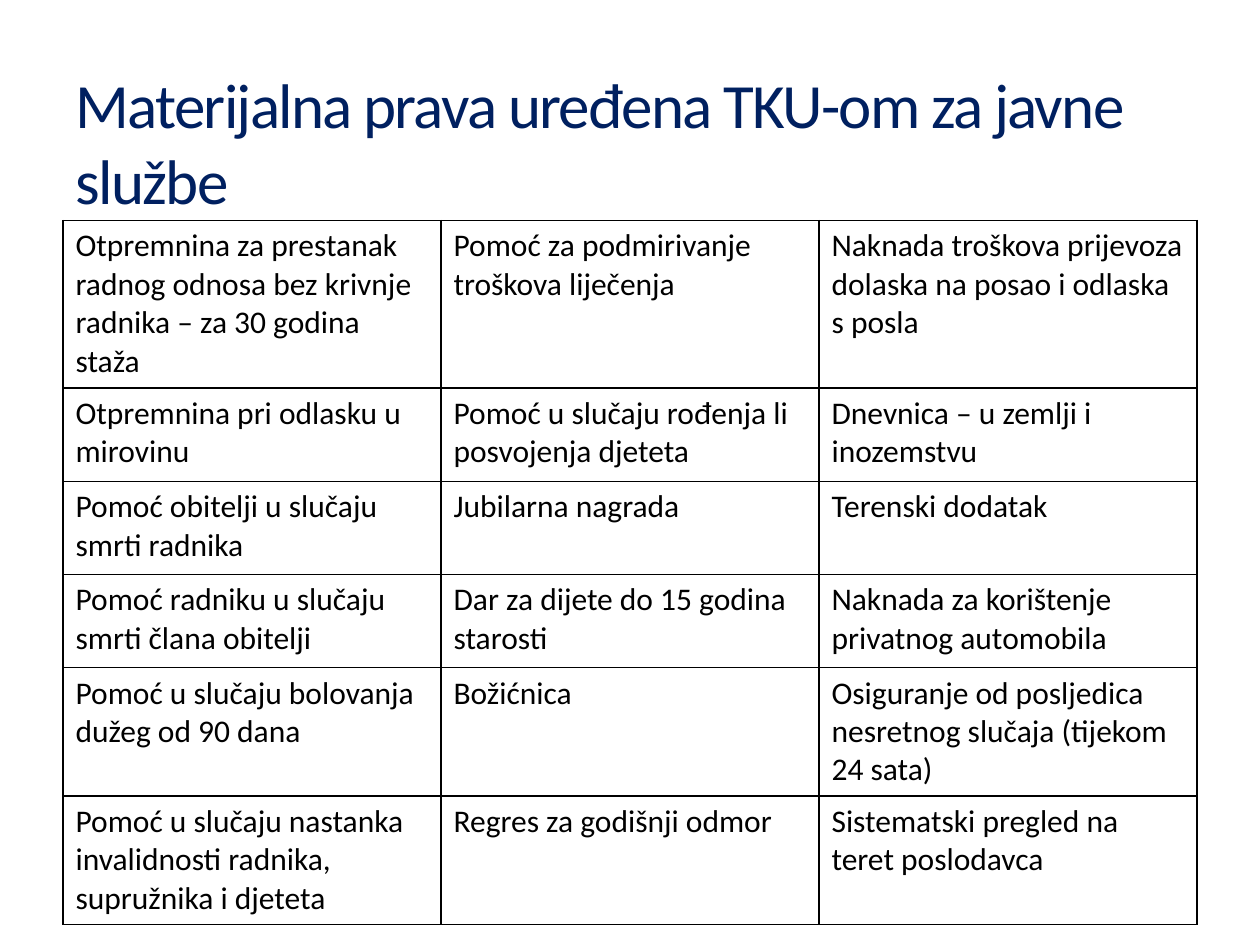
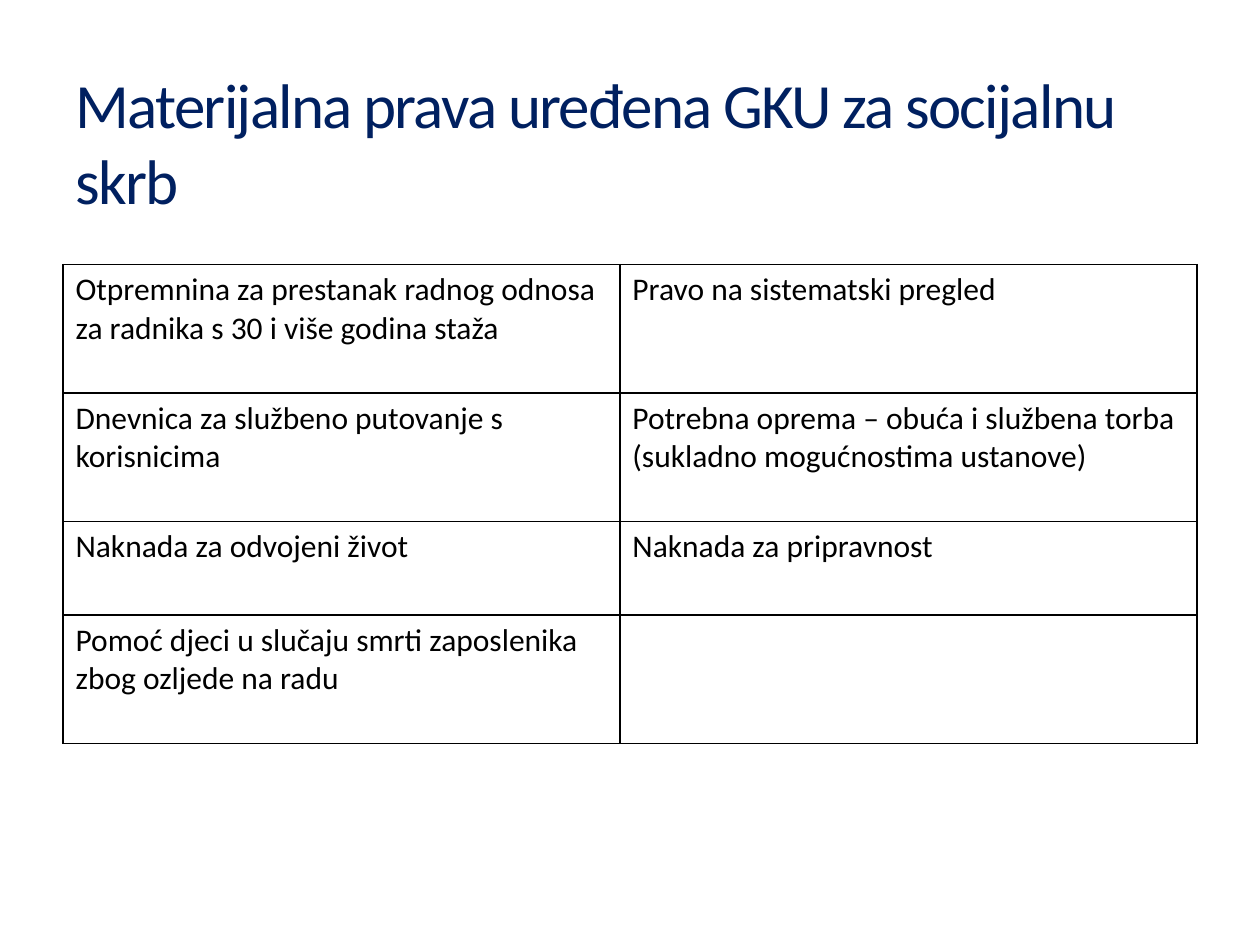
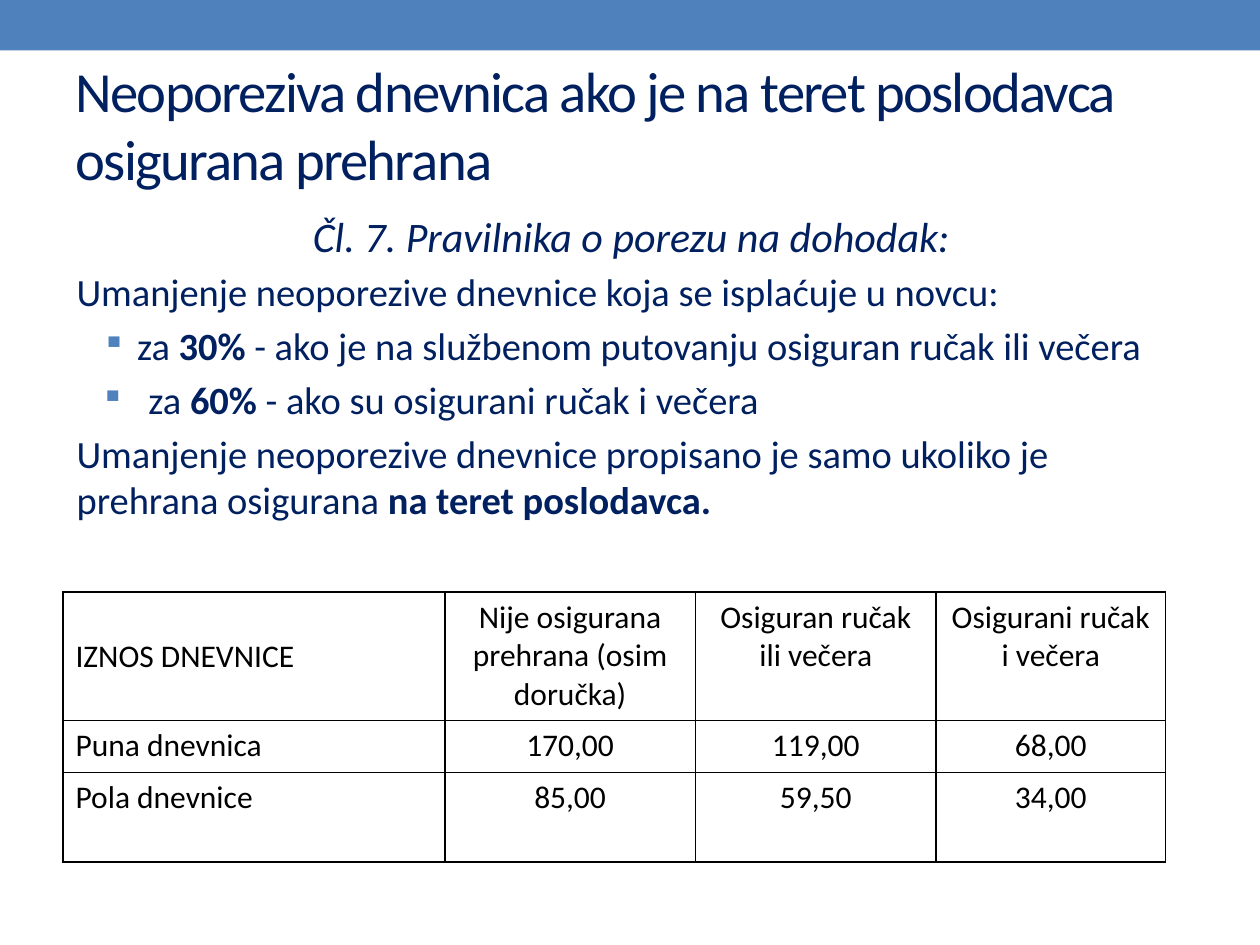
from lxml import etree
from pptx import Presentation
from pptx.dml.color import RGBColor
from pptx.enum import shapes, text
from pptx.oxml.ns import qn
from pptx.util import Inches, Pt

NAVY = RGBColor(0x00, 0x20, 0x60)
BLUE = RGBColor(0x4F, 0x81, 0xBD)
BLACK = RGBColor(0x00, 0x00, 0x00)
FONT = "Calibri"
LEFT = 0.5
WIDTH = 9

PUBLIC_SERVICE_RIGHTS = [
    ("Otpremnina za prestanak radnog odnosa bez krivnje radnika – za 30 godina staža",
     "Pomoć za podmirivanje troškova liječenja",
     "Naknada troškova prijevoza dolaska na posao i odlaska s posla"),
    ("Otpremnina pri odlasku u mirovinu",
     "Pomoć u slučaju rođenja li posvojenja djeteta",
     "Dnevnica – u zemlji i inozemstvu"),
    ("Pomoć obitelji u slučaju smrti radnika", "Jubilarna nagrada", "Terenski dodatak"),
    ("Pomoć radniku u slučaju smrti člana obitelji",
     "Dar za dijete do 15 godina starosti",
     "Naknada za korištenje privatnog automobila"),
    ("Pomoć u slučaju bolovanja dužeg od 90 dana",
     "Božićnica",
     "Osiguranje od posljedica nesretnog slučaja (tijekom 24 sata)"),
    ("Pomoć u slučaju nastanka invalidnosti radnika, supružnika i djeteta",
     "Regres za godišnji odmor",
     "Sistematski pregled na teret poslodavca"),
]
SOCIAL_CARE_RIGHTS = [
    ("Otpremnina za prestanak radnog odnosa za radnika s 30 i više godina staža",
     "Pravo na sistematski pregled"),
    ("Dnevnica za službeno putovanje s korisnicima",
     "Potrebna oprema – obuća i službena torba (sukladno mogućnostima ustanove)"),
    ("Naknada za odvojeni život", "Naknada za pripravnost"),
    ("Pomoć djeci u slučaju smrti zaposlenika zbog ozljede na radu", ""),
]
ALLOWANCES = [
    ("IZNOS DNEVNICE", "Nije osigurana prehrana (osim doručka)",
     "Osiguran ručak ili večera", "Osigurani ručak i večera"),
    ("Puna dnevnica", "170,00", "119,00", "68,00"),
    ("Pola dnevnice", "85,00", "59,50", "34,00"),
]
SLIDES = [
    dict(title="Materijalna prava uređena TKU-om za javne službe", title_height=1.08,
         title_size=36, rows=PUBLIC_SERVICE_RIGHTS, top=1.75, columns=[3, 3, 3],
         heights=[1.33, 0.74, 0.74, 0.74, 1.02, 1.02]),
    dict(title="Materijalna prava uređena GKU za socijalnu skrb", title_height=1.08,
         title_size=36, rows=SOCIAL_CARE_RIGHTS, top=2.1, columns=[4.42, 4.58],
         heights=[1.02, 1.02, 0.74, 1.02]),
    dict(title="Neoporeziva dnevnica ako je na teret poslodavca osigurana prehrana",
         title_height=0.8, title_size=32.4, rows=ALLOWANCES, top=4.7,
         columns=[3.03, 1.99, 1.91, 1.82], heights=[1.02, 0.41, 0.71]),
]
RULE_HEADING = "Čl. 7. Pravilnika o porezu na dohodak:"
RULES = [
    (None, [("Umanjenje neoporezive dnevnice koja se isplaćuje u novcu:", False)]),
    ((0.48, -0.28), [("za ", False), ("30% ", True),
                     ("- ako je na službenom putovanju osiguran ručak ili večera", False)]),
    ((0.57, -0.38), [("za ", False), ("60% ", True),
                     ("- ako su osigurani ručak i večera", False)]),
    (None, [("Umanjenje neoporezive dnevnice propisano je samo ukoliko je prehrana osigurana ",
             False), ("na teret poslodavca.", True)]),
]


def set_font(paragraph, size, color):
    paragraph.font.name = FONT
    paragraph.font.size = Pt(size)
    paragraph.font.color.rgb = color


def add_title(slide, title, height, size):
    shape = slide.shapes.title
    shape.left, shape.top = Inches(LEFT), Inches(0.58)
    shape.width, shape.height = Inches(WIDTH), Inches(height)
    frame = shape.text_frame
    frame.text = title
    frame.word_wrap = True
    frame.auto_size = text.MSO_AUTO_SIZE.NONE
    frame.vertical_anchor = text.MSO_ANCHOR.MIDDLE
    paragraph = frame.paragraphs[0]
    paragraph.alignment = text.PP_ALIGN.LEFT
    set_font(paragraph, size, NAVY)
    paragraph.runs[0].font._element.set("spc", "-100")


def add_borders(cell):
    properties = cell._tc.get_or_add_tcPr()
    for position, side in enumerate(("lnL", "lnR", "lnT", "lnB")):
        line = etree.Element(qn(f"a:{side}"), w=str(Pt(1)))
        fill = etree.SubElement(line, qn("a:solidFill"))
        etree.SubElement(fill, qn("a:srgbClr"), val=str(BLACK))
        properties.insert(position, line)


def add_grid(slide, rows, top, columns, heights):
    table = slide.shapes.add_table(
        len(rows), len(columns), Inches(LEFT), Inches(top),
        Inches(sum(columns)), Inches(sum(heights))).table
    table.first_row = table.horz_banding = False
    for column, width in zip(table.columns, columns):
        column.width = Inches(width)
    for row, height, values in zip(table.rows, heights, rows):
        row.height = Inches(height)
        for cell, value in zip(row.cells, values):
            cell.text = value
            cell.fill.background()
            set_font(cell.text_frame.paragraphs[0], 18, BLACK)
            add_borders(cell)
    return table


def add_band(slide):
    band = slide.shapes.add_shape(
        shapes.MSO_SHAPE.RECTANGLE, 0, 0, Inches(10), Inches(0.4))
    band.shadow.inherit = False
    band.fill.solid()
    band.fill.fore_color.rgb = BLUE
    band.line.fill.background()


def add_bullet(paragraph, margin, indent):
    properties = paragraph._p.get_or_add_pPr()
    properties.set("marL", str(Inches(margin)))
    properties.set("indent", str(Inches(indent)))
    color = etree.SubElement(properties, qn("a:buClr"))
    etree.SubElement(color, qn("a:srgbClr"), val=str(BLUE))
    etree.SubElement(properties, qn("a:buSzPct"), val="85000")
    etree.SubElement(properties, qn("a:buChar"), char="▪")


def add_rules(slide):
    frame = slide.shapes.add_textbox(
        Inches(0.51), Inches(1.62), Inches(WIDTH), Inches(2.8)).text_frame
    frame.word_wrap = True
    heading = frame.paragraphs[0]
    heading.text = RULE_HEADING
    heading.alignment = text.PP_ALIGN.CENTER
    set_font(heading, 24, NAVY)
    heading.font.italic = True
    for bullet, runs in RULES:
        paragraph = frame.add_paragraph()
        paragraph.space_before = Pt(4.4)
        if bullet:
            add_bullet(paragraph, *bullet)
        set_font(paragraph, 22, NAVY)
        for wording, bold in runs:
            run = paragraph.add_run()
            run.text = wording
            run.font.bold = bold


def main():
    presentation = Presentation()
    presentation.slide_width, presentation.slide_height = Inches(10), Inches(7.5)
    for content in SLIDES:
        slide = presentation.slides.add_slide(presentation.slide_layouts[5])
        add_title(slide, content["title"], content["title_height"], content["title_size"])
        table = add_grid(slide, content["rows"], content["top"],
                         content["columns"], content["heights"])
        if content["rows"] is ALLOWANCES:
            add_band(slide)
            add_rules(slide)
            table.cell(0, 0).vertical_anchor = text.MSO_ANCHOR.MIDDLE
            for row in table.rows:
                for cell in list(row.cells)[1:]:
                    cell.text_frame.paragraphs[0].alignment = text.PP_ALIGN.CENTER
    presentation.save("out.pptx")


if __name__ == "__main__":
    main()
